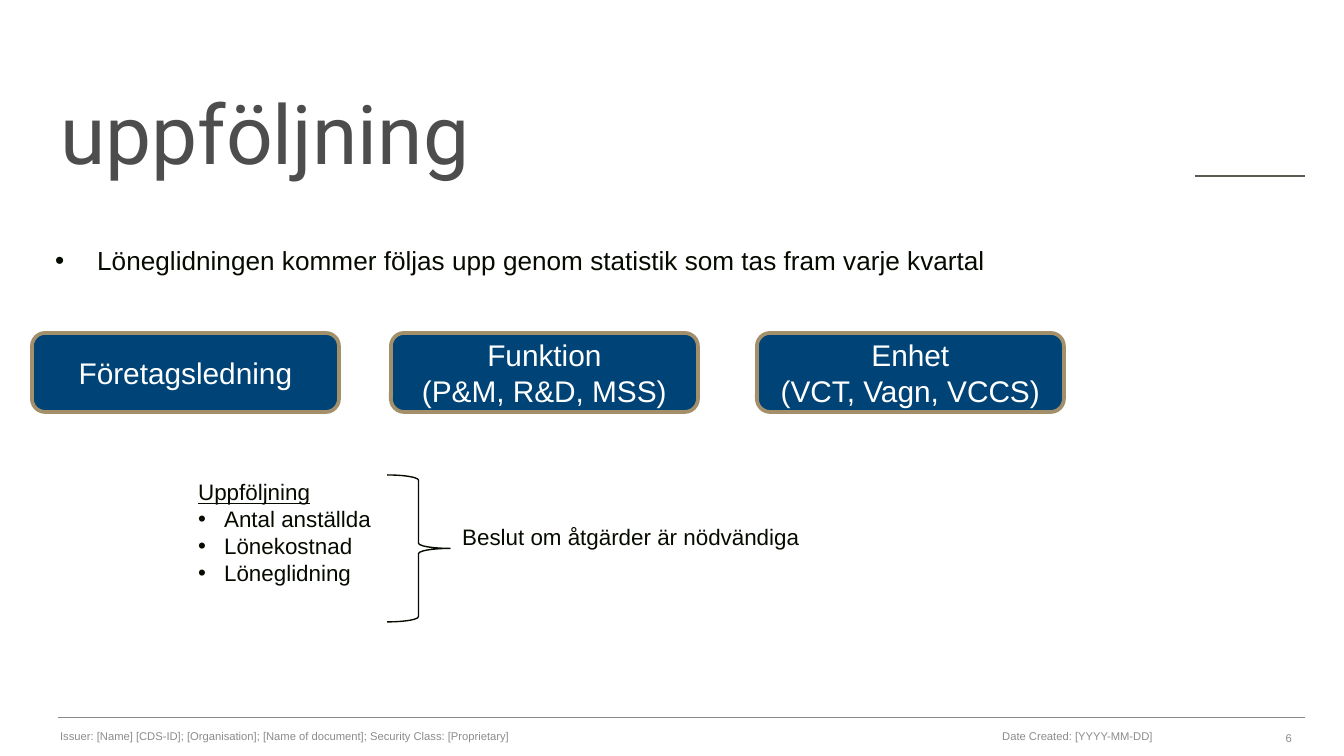
from dataclasses import dataclass

from lxml import etree
from pptx import Presentation
from pptx import util as u
from pptx.dml.color import RGBColor
from pptx.enum import shapes, text
from pptx.oxml import ns

SCALE = 914400 / 134.4


def px(length):
    """Turn px into EMU."""
    return u.Emu(round(length * SCALE))


@dataclass(frozen=True)
class Theme:
    """Colours, fonts and type sizes."""
    ink: str = "060B00"
    heading: str = "4D4D4D"
    muted: str = "8C8C8C"
    rule: str = "898A89"
    accent: str = "5C5B50"
    panel: str = "004376"
    frame: str = "A3906A"
    light: str = "FFFFFF"
    body_font: str = "Arial"
    title_font: str = "Roboto"
    title: int = 44
    level: int = 16
    lead: int = 14
    body: int = 12
    footer: int = 6


class SlideBuilder:
    """Holds the theme and the current slide."""

    def __init__(self, slide, theme):
        """Keep the slide and its theme."""
        self.slide = slide
        self.theme = theme

    def style(self, paragraph, size, colour, font=None):
        """Format every run of a paragraph."""
        for run in paragraph.runs:
            run.font.size = u.Pt(size)
            run.font.name = font or self.theme.body_font
            run.font.color.rgb = RGBColor.from_string(colour)

    def bullet(self, paragraph, indent):
        """Give a paragraph a hanging bullet."""
        properties = paragraph._p.get_or_add_pPr()
        properties.set("marL", str(px(indent)))
        properties.set("indent", str(-px(indent)))
        font = etree.SubElement(properties, ns.qn("a:buFont"))
        font.set("typeface", self.theme.body_font)
        etree.SubElement(properties, ns.qn("a:buChar")).set("char", "•")

    def text(self, box, words, size, colour, font=None, wrap=True, grow=False,
             anchor=text.MSO_ANCHOR.TOP, align=text.PP_ALIGN.LEFT, indent=0, first_bullet=0):
        """Add a text box and return its frame."""
        frame = self.slide.shapes.add_textbox(*map(px, box)).text_frame
        frame.text = words
        frame.word_wrap = wrap
        frame.vertical_anchor = anchor
        if grow:
            frame.auto_size = text.MSO_AUTO_SIZE.SHAPE_TO_FIT_TEXT
        for number, paragraph in enumerate(frame.paragraphs):
            if indent and number >= first_bullet:
                self.bullet(paragraph, indent)
            paragraph.alignment = align
            self.style(paragraph, size, colour, font)
        return frame

    def panel(self, box, words):
        """Add a framed rounded box with centred words."""
        panel = self.slide.shapes.add_shape(shapes.MSO_SHAPE.ROUNDED_RECTANGLE, *map(px, box))
        panel.shadow.inherit = False
        panel.fill.solid()
        panel.fill.fore_color.rgb = RGBColor.from_string(self.theme.panel)
        panel.line.color.rgb = RGBColor.from_string(self.theme.frame)
        panel.line.width = u.Pt(2)
        frame = panel.text_frame
        frame.text = words
        frame.vertical_anchor = text.MSO_ANCHOR.MIDDLE
        frame.paragraphs[0].alignment = text.PP_ALIGN.CENTER
        self.style(frame.paragraphs[0], self.theme.level, self.theme.light)

    def brace(self, box):
        """Add a right brace."""
        brace = self.slide.shapes.add_shape(shapes.MSO_SHAPE.RIGHT_BRACE, *map(px, box))
        brace.shadow.inherit = False
        brace.fill.background()
        brace.line.color.rgb = RGBColor.from_string(self.theme.ink)
        brace.line.width = u.Pt(0.75)

    def rule(self, left, right, y):
        """Add a thin horizontal line."""
        rule = self.slide.shapes.add_connector(
            shapes.MSO_CONNECTOR.STRAIGHT, px(left), px(y), px(right), px(y))
        rule.line.color.rgb = RGBColor.from_string(self.theme.rule)
        rule.line.width = u.Pt(0.25)
        etree.SubElement(rule._element.spPr, ns.qn("a:effectLst"))

    def topped_table(self, box):
        """Add an empty one-cell table with a top border."""
        table = self.slide.shapes.add_table(1, 1, *map(px, box)).table
        table.first_row = table.horz_banding = False
        cell = table.cell(0, 0)
        properties = cell._tc.get_or_add_tcPr()
        for side in ("lnL", "lnR", "lnT", "lnB"):
            border = etree.SubElement(properties, ns.qn(f"a:{side}"))
            if side == "lnT":
                border.set("w", str(u.Pt(0.75)))
                fill = etree.SubElement(border, ns.qn("a:solidFill"))
                etree.SubElement(fill, ns.qn("a:srgbClr")).set("val", self.theme.accent)
            else:
                etree.SubElement(border, ns.qn("a:noFill"))
        cell.fill.background()


def main():
    """Build and save the slide."""
    deck = Presentation()
    deck.slide_width, deck.slide_height = px(1344), px(756)
    theme = Theme()
    page = SlideBuilder(deck.slides.add_slide(deck.slide_layouts[6]), theme)

    page.topped_table((1195, 176, 110, 55))
    page.rule(58, 1305, 717)
    footers = (
        ((989, 716, 313, 40), "Date Created: [YYYY-MM-DD]", text.PP_ALIGN.LEFT),
        ((47, 716, 837, 40),
         "Issuer: [Name] [CDS-ID]; [Organisation]; [Name of document]; "
         "Security Class: [Proprietary]", text.PP_ALIGN.LEFT),
        ((1156, 718, 149, 40), "6", text.PP_ALIGN.RIGHT),
    )
    for box, words, align in footers:
        page.text(box, words, theme.footer, theme.muted,
                  anchor=text.MSO_ANCHOR.MIDDLE, align=align)

    title = page.text((47, 99, 911, 126), "uppföljning", theme.title, theme.heading,
                      theme.title_font)
    title.paragraphs[0].line_spacing = 0.75
    page.text((42, 238, 1128, 46),
              "Löneglidningen kommer följas upp genom statistik som tas fram varje kvartal",
              theme.lead, theme.ink, grow=True, indent=42)

    levels = ((32, "Företagsledning"), (391, "Funktion\v(P&M, R&D, MSS)"),
              (757, "Enhet\v(VCT, Vagn, VCCS)"))
    for left, words in levels:
        page.panel((left, 333, 307, 79), words)

    measures = page.text((185, 472, 200, 122),
                         "Uppföljning\nAntal anställda\nLönekostnad\nLöneglidning",
                         theme.body, theme.ink, wrap=False, grow=True,
                         indent=26, first_bullet=1)
    measures.paragraphs[0].runs[0].font.underline = True
    page.brace((387, 475, 63, 147))
    page.text((449, 517, 367, 40), "Beslut om åtgärder är nödvändiga",
              theme.body, theme.ink, wrap=False, grow=True)

    deck.save("out.pptx")


if __name__ == "__main__":
    main()
